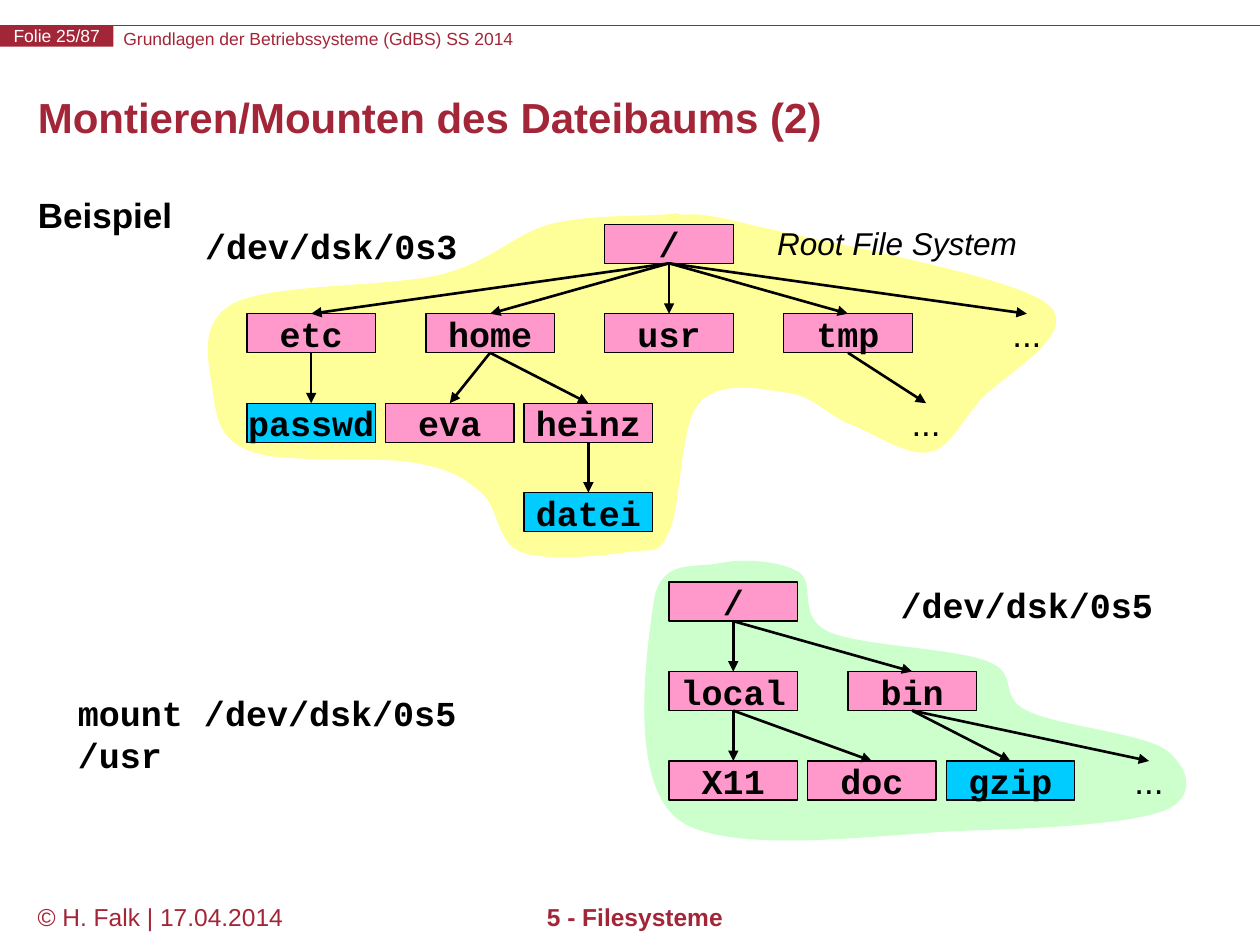
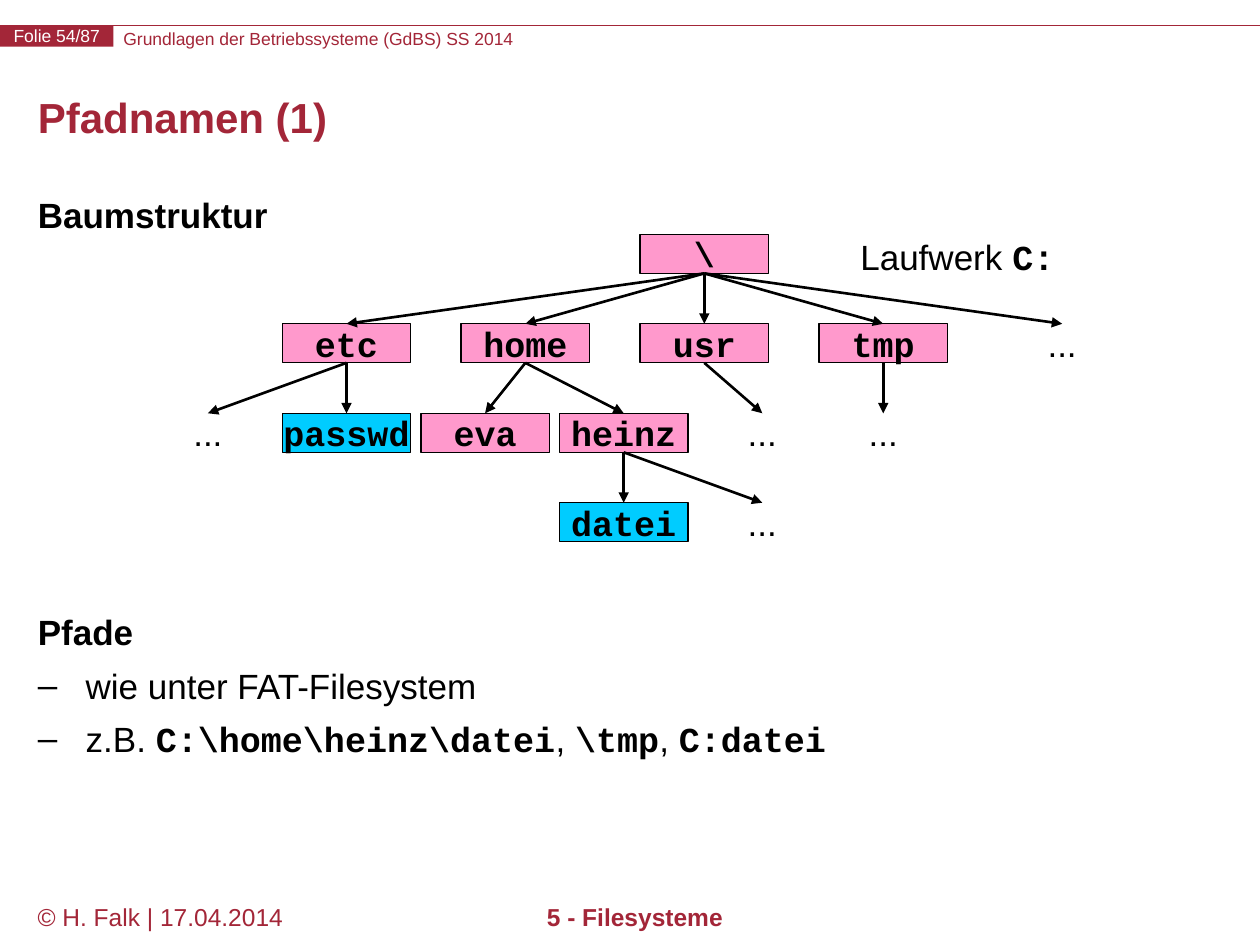
"""Builds two slides on mounting a file tree and on path names."""
from pptx import Presentation
from pptx.dml.color import RGBColor
from pptx.enum import shapes, text as t
from pptx.oxml.xmlchemy import OxmlElement
from pptx.util import Inches, Pt

RED = RGBColor(0xA3, 0x26, 0x38)
BLACK = RGBColor(0, 0, 0)
WHITE = RGBColor(255, 255, 255)
PINK = RGBColor(0xFF, 0x99, 0xCC)
CYAN = RGBColor(0, 0xCC, 0xFF)
YELLOW = RGBColor(0xFF, 0xFF, 0x99)
GREEN = RGBColor(0xCC, 0xFF, 0xCC)
SANS, MONO = "Arial", "Courier New"

COURSE = "Grundlagen der Betriebssysteme (GdBS) SS 2014"
AUTHOR = "© H. Falk | 17.04.2014"
CHAPTER = "5 - Filesysteme"

NODE_W, NODE_H = 1.02, 0.31
BRANCH, LEAF, LEVEL = 1.42, 1.1, 0.71
FILES = {"passwd", "datei", "gzip"}
MORE = "..."

# Each node: label, distance from the left edge of the tree, children
ROOT_TREE = ("/", 2 * BRANCH, [
    ("etc", 0, [("passwd", 0, [])]),
    ("home", BRANCH, [("eva", LEAF, []),
                      ("heinz", 2 * LEAF, [("datei", 2 * LEAF, [])])]),
    ("usr", 2 * BRANCH, []),
    ("tmp", 3 * BRANCH, [(MORE, 4.88, [])]),
    (MORE, 4 * BRANCH, []),
])
USR_TREE = ("/", 0, [
    ("local", 0, [("X11", 0, []), ("doc", LEAF, [])]),
    ("bin", BRANCH, [("gzip", 2 * LEAF, []), (MORE, 3 * LEAF, [])]),
])
DRIVE_TREE = ("\\", 2 * BRANCH, [
    ("etc", 0, [(MORE, -LEAF, []), ("passwd", 0, [])]),
    ("home", BRANCH, [("eva", LEAF, []),
                      ("heinz", 2 * LEAF, [("datei", 2 * LEAF, []),
                                           (MORE, 3 * LEAF, [])])]),
    ("usr", 2 * BRANCH, [(MORE, 3 * LEAF, [])]),
    ("tmp", 3 * BRANCH, [(MORE, 3 * BRANCH, [])]),
    (MORE, 4 * BRANCH, []),
])

# Outlines: start point, then the three points of each curve
USR_AREA = [
    (5.71, 4.47),
    (5.9, 4.43), (6.19, 4.45), (6.34, 4.54), (6.48, 4.63), (6.32, 4.89), (6.57, 5.01),
    (6.82, 5.13), (7.57, 5.14), (7.84, 5.25), (8.1, 5.35), (7.91, 5.52), (8.15, 5.64),
    (8.39, 5.76), (9.07, 5.82), (9.25, 5.95), (9.44, 6.09), (9.5, 6.32), (9.25, 6.43),
    (9, 6.53), (8.4, 6.57), (7.76, 6.59), (7.11, 6.6), (5.82, 6.81), (5.39, 6.51),
    (4.97, 6.2), (5.14, 5.11), (5.19, 4.77), (5.24, 4.43), (5.52, 4.51), (5.71, 4.47),
]
ROOT_AREA = [
    (5.31, 1.7),
    (5.48, 1.69), (5.29, 1.69), (5.39, 1.7), (5.5, 1.72), (5.46, 1.66), (5.94, 1.78),
    (6.43, 1.9), (8.01, 2.18), (8.31, 2.41), (8.61, 2.65), (7.91, 3), (7.76, 3.2),
    (7.6, 3.39), (7.53, 3.57), (7.36, 3.59), (7.19, 3.62), (6.92, 3.43), (6.73, 3.36),
    (6.55, 3.28), (6.46, 3.15), (6.26, 3.12), (6.06, 3.09), (5.71, 3.01), (5.55, 3.2),
    (5.39, 3.38), (5.41, 4.03), (5.31, 4.22), (5.22, 4.42), (5.2, 4.35), (5, 4.38),
    (4.8, 4.41), (4.33, 4.46), (4.13, 4.38), (3.94, 4.3), (3.96, 4.03), (3.82, 3.91),
    (3.68, 3.79), (3.57, 3.72), (3.27, 3.67), (2.97, 3.62), (2.27, 3.68), (2.01, 3.59),
    (1.74, 3.5), (1.72, 3.32), (1.69, 3.12), (1.67, 2.92), (1.55, 2.57), (1.85, 2.41),
    (2.15, 2.25), (3.08, 2.28), (3.5, 2.18), (3.92, 2.07), (4.07, 1.86), (4.37, 1.78),
    (4.67, 1.7), (5.14, 1.72), (5.31, 1.7),
]

HEADING = dict(bold=True, spacing=0.9)
ITEM = dict(bullet="–", spacing=1.2, before=1.5)
SLIDES = [
    dict(number="Folie 25/87", title="Montieren/Mounten des Dateibaums (2)",
         body=[("Beispiel", HEADING)],
         areas=[(USR_AREA, GREEN), (ROOT_AREA, YELLOW)],
         trees=[(ROOT_TREE, 1.96, 1.78), (USR_TREE, 5.31, 4.62)],
         labels=[("Root File System", (6.07, 1.73, 2.1, 0.4), dict(size=18, italic=True)),
                 ("`/dev/dsk/0s3`", (1.53, 1.73, 2.2, 0.43), {}),
                 ("`/dev/dsk/0s5`", (7.05, 4.58, 2.2, 0.43), {}),
                 ("`mount /dev/dsk/0s5 /usr`", (0.52, 5.44, 3.9, 0.76), dict(wrap=True))]),
    dict(number="Folie 54/87", title="Pfadnamen (1)",
         body=[("Baumstruktur", HEADING),
               ("Pfade", dict(HEADING, before=217)),
               ("wie unter FAT-Filesystem", ITEM),
               (r"z.B. `C:\home\heinz\datei`, `\tmp`, `C:datei`", ITEM)],
         areas=[],
         trees=[(DRIVE_TREE, 2.24, 1.86)],
         labels=[("Laufwerk `C:`", (6.73, 1.82, 1.74, 0.43), {})]),
]


def write(paragraph, text, size=20, color=BLACK, bold=False, italic=False,
          align=t.PP_ALIGN.LEFT, spacing=1.0, before=0, bullet=None):
    """Fills a paragraph; parts between backticks are set as bold code."""
    paragraph.alignment = align
    paragraph.line_spacing = spacing
    paragraph.space_before = Pt(before)
    for index, part in enumerate(text.split("`")):
        if part:
            code = index % 2 == 1
            run = paragraph.add_run()
            run.text = part
            run.font.name = MONO if code else SANS
            run.font.size = Pt(size)
            run.font.bold = bold or code
            run.font.italic = italic
            run.font.color.rgb = color
    return paragraph


def fit(frame, wrap=False, anchor=t.MSO_ANCHOR.TOP, inset=None):
    """Sets how a text frame holds its text."""
    frame.auto_size = t.MSO_AUTO_SIZE.NONE
    frame.word_wrap = wrap
    frame.vertical_anchor = anchor
    if inset is not None:
        frame.margin_left = frame.margin_right = Inches(inset)
        frame.margin_top = frame.margin_bottom = Inches(inset)
    return frame.paragraphs[0]


def add_label(slide, text, box, wrap=False, anchor=t.MSO_ANCHOR.TOP, inset=None, **style):
    """Adds a text box."""
    label = slide.shapes.add_textbox(*map(Inches, box))
    write(fit(label.text_frame, wrap, anchor, inset), text, **style)


def add_box(slide, text, box, fill, border=None, inset=None, **style):
    """Adds a filled rectangle with centred text."""
    rect = slide.shapes.add_shape(shapes.MSO_SHAPE.RECTANGLE, *map(Inches, box))
    rect.shadow.inherit = False
    rect.fill.solid()
    rect.fill.fore_color.rgb = fill
    if border is None:
        rect.line.fill.background()
    else:
        rect.line.color.rgb = border
        rect.line.width = Pt(0.75)
    write(fit(rect.text_frame, anchor=t.MSO_ANCHOR.MIDDLE, inset=inset), text,
          align=t.PP_ALIGN.CENTER, **style)


def add_line(slide, start, end, color, width, arrow=False):
    """Adds a straight line, with an arrowhead at its end if asked."""
    line = slide.shapes.add_connector(shapes.MSO_CONNECTOR.STRAIGHT,
                                      *map(Inches, start + end))
    line.line.color.rgb = color
    line.line.width = Pt(width)
    properties = line.element.spPr
    if arrow:
        head = OxmlElement("a:tailEnd")
        head.set("type", "triangle")
        properties.xpath("./a:ln")[0].append(head)
    properties.append(OxmlElement("a:effectLst"))


def add_area(slide, points, fill):
    """Adds a closed area bounded by cubic curves."""
    start, *rest = [(Inches(x), Inches(y)) for x, y in points]
    outline = slide.shapes.build_freeform(*start)
    outline.add_line_segments(rest, close=True)
    area = outline.convert_to_shape()
    area.shadow.inherit = False
    area.fill.solid()
    area.fill.fore_color.rgb = fill
    area.line.fill.background()
    steps = area.element.xpath(".//a:lnTo")
    for first in range(0, len(rest), 3):
        curve = OxmlElement("a:cubicBezTo")
        steps[first].addprevious(curve)
        for step in steps[first:first + 3]:
            curve.append(step[0])
            step.getparent().remove(step)


def add_tree(slide, node, left, top):
    """Draws a node, its children below it and the arrows to them."""
    name, offset, children = node
    box = (left + offset, top, NODE_W, NODE_H)
    if name == MORE:
        add_label(slide, name, box, anchor=t.MSO_ANCHOR.MIDDLE, align=t.PP_ALIGN.CENTER)
    else:
        add_box(slide, f"`{name}`", box, CYAN if name in FILES else PINK, BLACK)
    middle = left + NODE_W / 2
    for child in children:
        add_tree(slide, child, left, top + LEVEL)
        add_line(slide, (middle + offset, top + NODE_H),
                 (middle + child[1], top + LEVEL), BLACK, 1.5, arrow=True)


def add_frame(slide, number):
    """Draws the header and footer shared by the slides."""
    add_line(slide, (0, 0.2), (10, 0.2), RED, 0.75)
    add_label(slide, COURSE, (0.98, 0.22, 6.6, 0.17), inset=0, size=10, color=RED)
    add_box(slide, number, (0, 0.2, 0.9, 0.17), RED, inset=0, size=10, color=WHITE)
    add_label(slide, AUTHOR, (0.2, 7.11, 2.2, 0.39), size=14, color=RED)
    add_label(slide, CHAPTER, (2.01, 7.11, 6.06, 0.39), size=14, color=RED,
              bold=True, align=t.PP_ALIGN.CENTER)


def move(placeholder, *box):
    """Puts a placeholder at the given place."""
    (placeholder.left, placeholder.top,
     placeholder.width, placeholder.height) = map(Inches, box)
    return placeholder.text_frame


def fill_body(frame, lines):
    """Writes headings and dashed items with a hanging indent."""
    paragraph = fit(frame, wrap=True)
    for index, (line, style) in enumerate(lines):
        if index:
            paragraph = frame.add_paragraph()
        write(paragraph, line, **style)
        properties = paragraph._p.get_or_add_pPr()
        properties.set("marL", str(Inches(0.38)))
        properties.set("indent", str(-Inches(0.38)))
        dash = style.get("bullet")
        mark = OxmlElement("a:buChar" if dash else "a:buNone")
        if dash:
            mark.set("char", dash)
        properties.append(mark)


def main():
    """Builds and saves the slides."""
    deck = Presentation()
    deck.slide_width, deck.slide_height = Inches(10), Inches(7.5)
    for content in SLIDES:
        slide = deck.slides.add_slide(deck.slide_layouts[1])
        heading, body = slide.placeholders
        title = fit(move(heading, 0.2, 0.6, 9.61, 0.72), wrap=True,
                    anchor=t.MSO_ANCHOR.MIDDLE)
        write(title, content["title"], size=24, color=RED, bold=True, spacing=Pt(24))
        fill_body(move(body, 0.2, 1.52, 9.61, 5.46), content["body"])
        add_frame(slide, content["number"])
        for points, fill in content["areas"]:
            add_area(slide, points, fill)
        for tree, left, top in content["trees"]:
            add_tree(slide, tree, left, top)
        for label, box, style in content["labels"]:
            add_label(slide, label, box, **style)
    deck.save("out.pptx")


if __name__ == "__main__":
    main()
